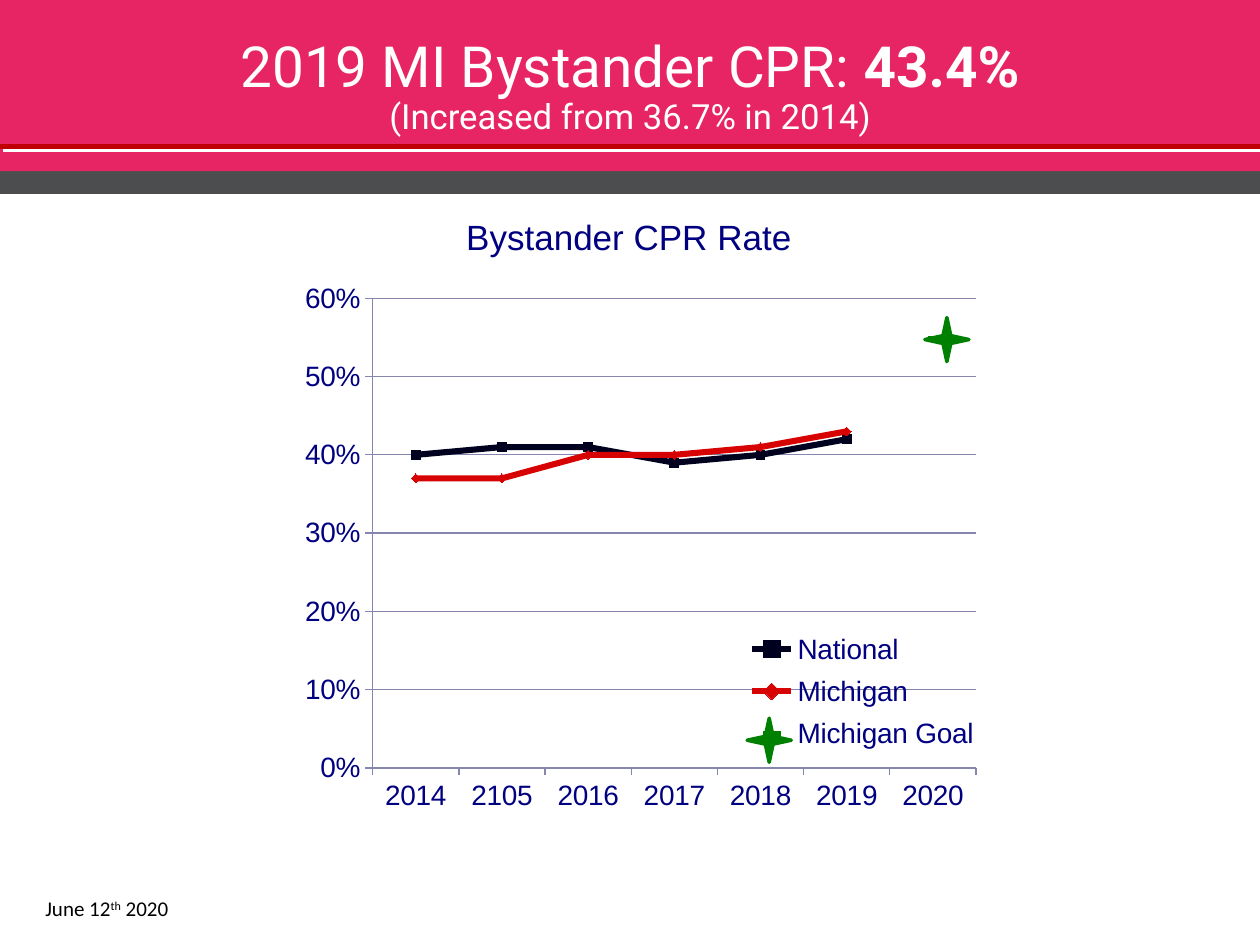
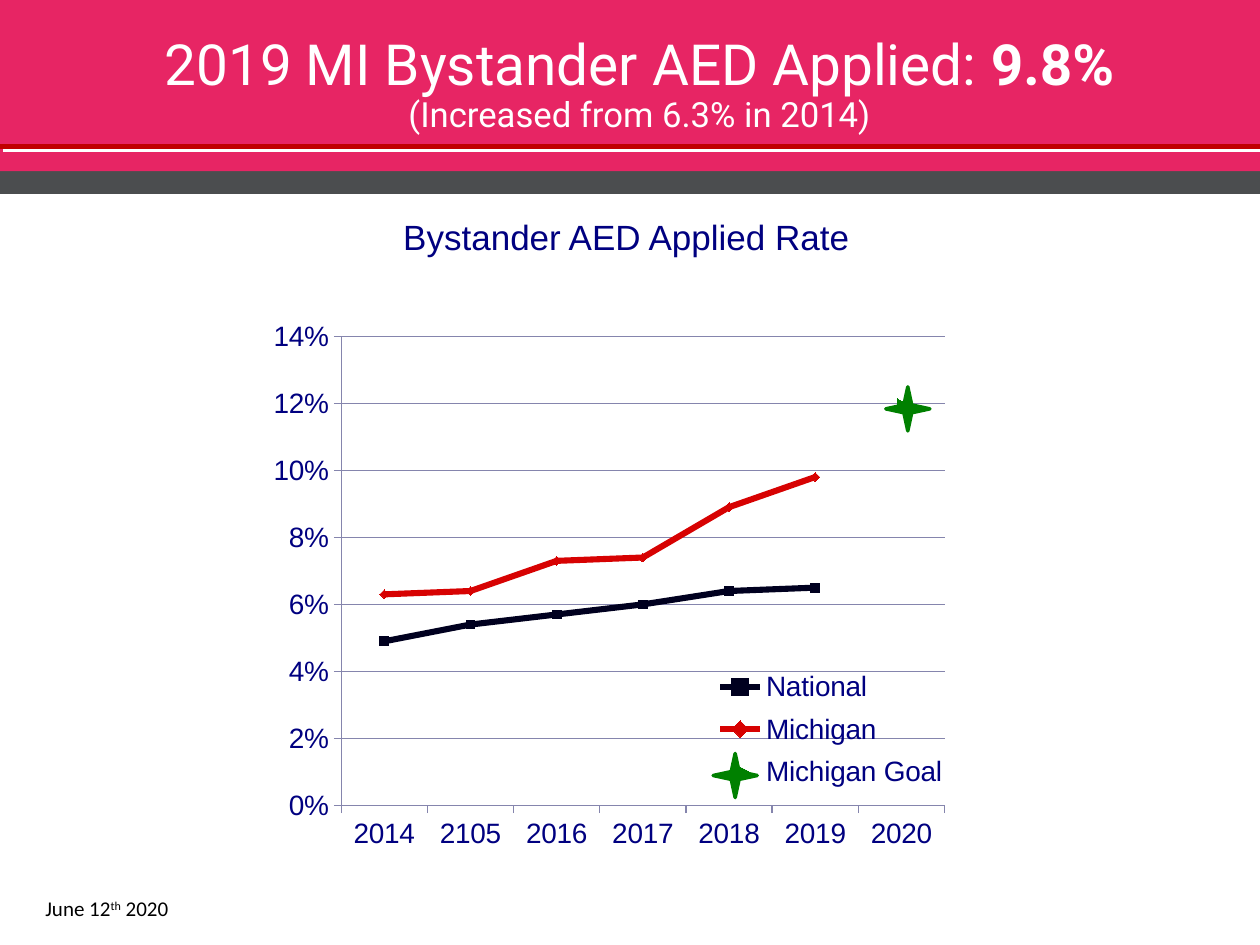
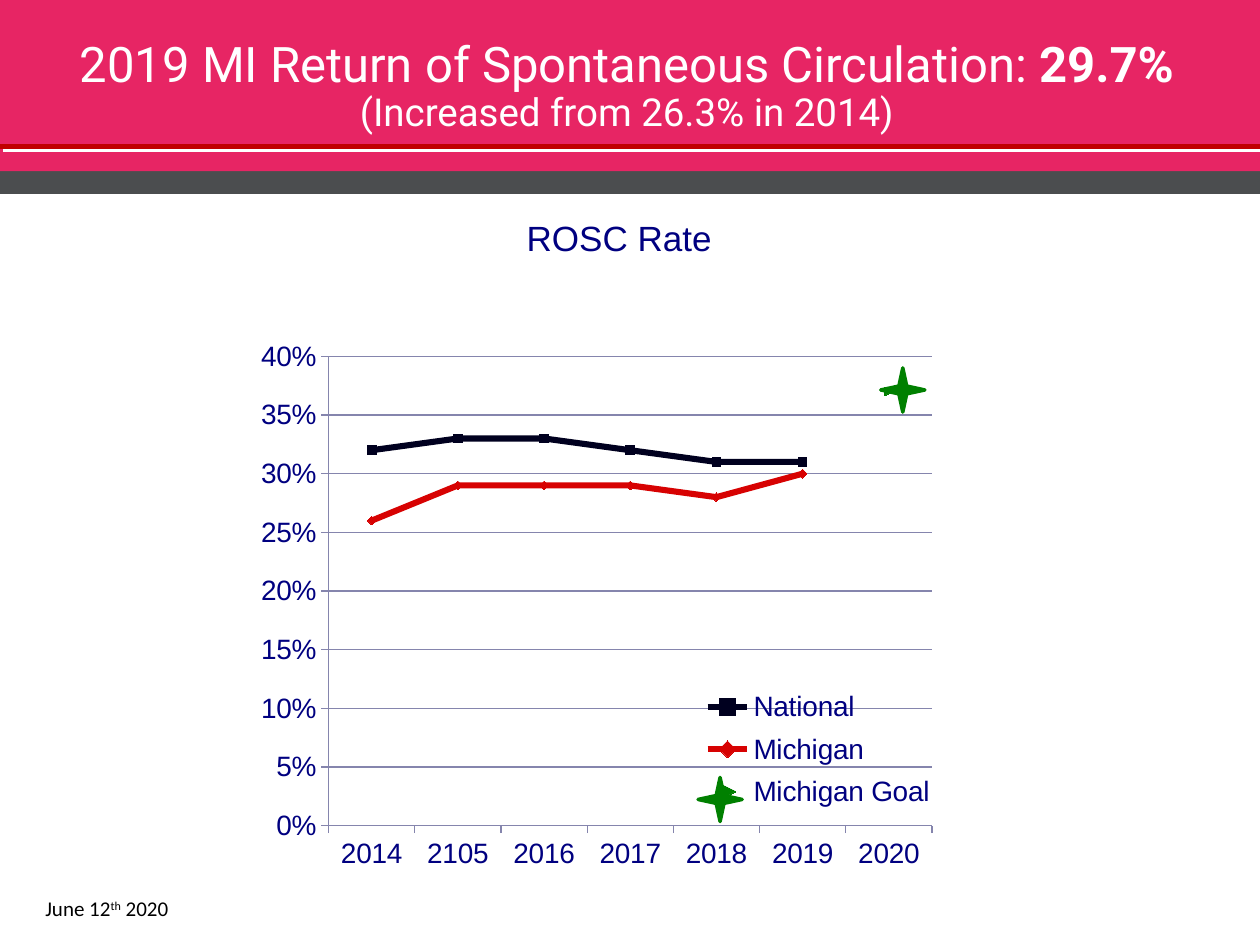
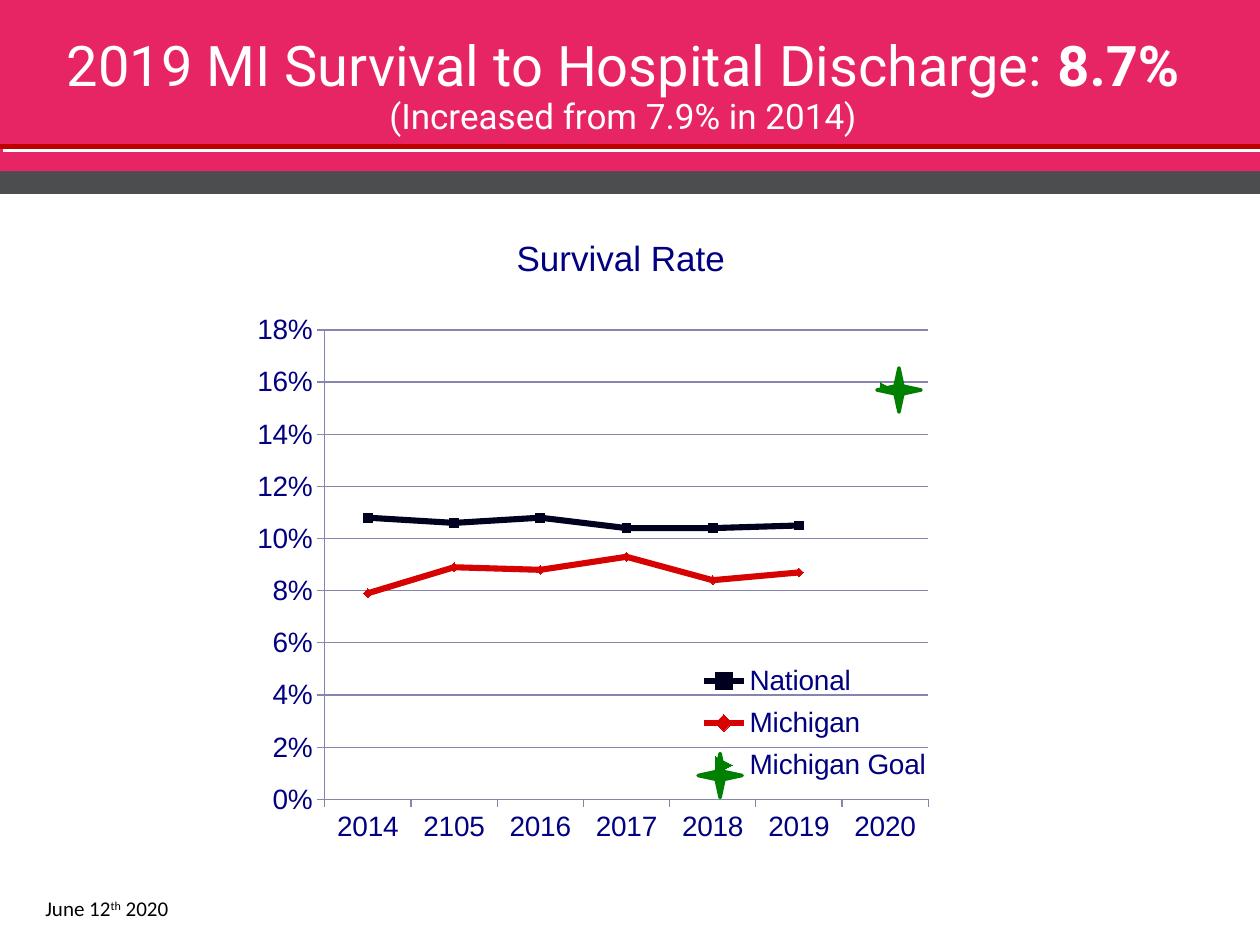
from pptx import Presentation
from pptx import util as u
from pptx.chart.data import CategoryChartData
from pptx.dml.color import RGBColor
from pptx.enum import chart as charts, shapes, text
from pptx.oxml import parse_xml
from pptx.oxml.ns import nsdecls, qn

COLORS = {
    "pink": "E72564", "gray": "4B4D4F", "white": "FFFFFF", "black": "000000",
    "rule": "C00000", "navy": "000080", "grid": "8585AD",
    "national": "00001F", "michigan": "D70202", "goal": "008000",
}
YEARS = ["2014", "2105", "2016", "2017", "2018", "2019", "2020"]
CHART_WIDTH, CHART_HEIGHT = 5.48, 4.4
STAR_SIZE = 0.35
PLOT_LAYOUT = (0.1, 0.061, 0.874, 0.847)
LEGEND_LAYOUT = (0.64, 0.645, 0.34, 0.25)

# Boxes are left, top, width, height in inches; stars are left, top.
RATES = [
    dict(title="2019 MI Bystander CPR: ", rate="43.4%", change="(Increased from 36.7% in 2014)",
         title_box=(0.69, 0.22, 8.62, 0.95), sizes=(32.4, 19.8),
         heading="Bystander CPR Rate", heading_box=(3.65, 1.66, 2.7, 0.44),
         chart_at=(2.41, 2.1), stars=[(7.34, 2.52), (5.93, 5.7)], scale=(0.6, 0.1),
         national=[0.4, 0.41, 0.41, 0.39, 0.4, 0.42],
         michigan=[0.37, 0.37, 0.4, 0.4, 0.41, 0.43], goal=0.55,
         goal_marker=charts.XL_MARKER_STYLE.DASH),
    dict(title="2019 MI Bystander AED Applied: ", rate="9.8%", change="(Increased from 6.3% in 2014)",
         title_box=(0.69, 0, 8.77, 1.36), sizes=(32.4, 19.8),
         heading="Bystander AED Applied Rate", heading_box=(3.15, 1.66, 3.7, 0.44),
         chart_at=(2.16, 2.4), stars=[(7.03, 3.07), (5.66, 5.98)], scale=(0.14, 0.02),
         national=[0.049, 0.054, 0.057, 0.06, 0.064, 0.065],
         michigan=[0.063, 0.064, 0.073, 0.074, 0.089, 0.098], goal=0.12),
    dict(title="2019 MI Return of Spontaneous Circulation: ", rate="29.7%",
         change="(Increased from 26.3% in 2014)",
         title_box=(0.17, 0.22, 9.61, 0.95), sizes=(28, 22),
         heading="ROSC Rate", heading_box=(4.13, 1.67, 1.58, 0.44),
         chart_at=(2.06, 2.56), stars=[(6.99, 2.92), (5.54, 6.17)], scale=(0.4, 0.05),
         national=[0.32, 0.33, 0.33, 0.32, 0.31, 0.31],
         michigan=[0.26, 0.29, 0.29, 0.29, 0.28, 0.3], goal=0.37),
    dict(title="2019 MI Survival to Hospital Discharge: ", rate="8.7%",
         change="(Increased from 7.9% in 2014)",
         title_box=(0.17, 0.22, 9.55, 0.95), sizes=(32, 20),
         heading="Survival Rate", heading_box=(4.05, 1.83, 1.77, 0.44),
         chart_at=(2.03, 2.35), stars=[(6.96, 2.92), (5.54, 5.98)], scale=(0.18, 0.02),
         national=[0.108, 0.106, 0.108, 0.104, 0.104, 0.105],
         michigan=[0.079, 0.089, 0.088, 0.093, 0.084, 0.087], goal=0.158),
]


def color(name):
    return RGBColor.from_string(COLORS[name])


def inches(*lengths):
    return [u.Inches(length) for length in lengths]


def add_run(paragraph, words, font="Arial", size=20, ink="navy", bold=False, baseline=None):
    run = paragraph.add_run()
    run.text = words
    run.font.name = font
    run.font.size = u.Pt(size)
    run.font.bold = bold
    run.font.color.rgb = color(ink)
    if baseline:
        run.font._element.set("baseline", str(baseline))


def manual_layout(box, inner=False):
    """Return a c:layout element placing a chart part by fractions of the chart."""
    target = '<c:layoutTarget val="inner"/>' if inner else ""
    modes = '<c:xMode val="edge"/><c:yMode val="edge"/>'
    sides = "".join(f'<c:{side} val="{value}"/>' for side, value in zip("xywh", box))
    return parse_xml(f'<c:layout {nsdecls("c")}><c:manualLayout>{target}{modes}{sides}'
                     '</c:manualLayout></c:layout>')


class Deck:
    def __init__(self):
        self.presentation = Presentation()
        self.presentation.slide_width, self.presentation.slide_height = inches(10, 7.5)
        self.slide = None

    def new_slide(self):
        self.slide = self.presentation.slides.add_slide(self.presentation.slide_layouts[6])
        self.shape(shapes.MSO_SHAPE.RECTANGLE, (0, 0, 10, 1.54), "gray")
        self.shape(shapes.MSO_SHAPE.RECTANGLE, (0, 0, 10, 1.36), "pink")

    def shape(self, kind, box, fill, line_width=0):
        shape = self.slide.shapes.add_shape(kind, *inches(*box))
        shape.shadow.inherit = False
        shape.fill.solid()
        shape.fill.fore_color.rgb = color(fill)
        if line_width:
            shape.line.color.rgb = color(fill)
            shape.line.width = u.Pt(line_width)
        else:
            shape.line.fill.background()

    def star(self, left, top):
        self.shape(shapes.MSO_SHAPE.STAR_4_POINT, (left, top, STAR_SIZE, STAR_SIZE), "goal", 2)

    def text_box(self, box, wrap=True, anchor=text.MSO_ANCHOR.MIDDLE, grow=True):
        """Add an empty text box and return its first paragraph."""
        frame = self.slide.shapes.add_textbox(*inches(*box)).text_frame
        frame.word_wrap = wrap
        frame.vertical_anchor = anchor
        frame.auto_size = (text.MSO_AUTO_SIZE.SHAPE_TO_FIT_TEXT if grow
                           else text.MSO_AUTO_SIZE.NONE)
        frame.margin_left = frame.margin_right = u.Inches(0.05)
        frame.margin_top = frame.margin_bottom = u.Inches(0.05)
        return frame.paragraphs[0]

    def title(self, box, words, rate, change, sizes):
        paragraph = self.text_box(box, grow=False)
        paragraph.alignment = text.PP_ALIGN.CENTER
        paragraph.line_spacing = 0.9
        style = dict(font="Roboto", ink="white")
        add_run(paragraph, words, size=sizes[0], **style)
        add_run(paragraph, rate, size=sizes[0], bold=True, **style)
        paragraph.add_line_break()
        add_run(paragraph, change, size=sizes[1], **style)

    def title_rule(self):
        """Draw the red line under the title with its hard white shadow."""
        line = self.slide.shapes.add_connector(
            shapes.MSO_CONNECTOR.STRAIGHT, *inches(0, 1.16, 10, 1.16))
        line.line.color.rgb = color("rule")
        line.line.width = u.Pt(3)
        line._element.spPr.append(parse_xml(
            f'<a:effectLst {nsdecls("a")}><a:outerShdw dist="35560" dir="2700000" algn="ctr" '
            f'rotWithShape="0"><a:srgbClr val="{COLORS["white"]}"/></a:outerShdw></a:effectLst>'))

    def heading(self, box, words):
        add_run(self.text_box(box, wrap=False, anchor=text.MSO_ANCHOR.TOP), words)

    def date(self):
        paragraph = self.text_box((0.31, 7.06, 2.25, 0.3))
        for words, baseline in (("June 12", None), ("th", 30000), (" 2020", None)):
            add_run(paragraph, words, "Calibri", 12, "black", baseline=baseline)

    def rate_chart(self, at, national, michigan, goal, scale, goal_marker):
        data = CategoryChartData(number_format="0%")
        data.categories = YEARS
        data.add_series("National", national + [None])
        data.add_series("Michigan", michigan + [None])
        data.add_series("Michigan Goal", [None] * 6 + [goal])
        chart = self.slide.shapes.add_chart(
            charts.XL_CHART_TYPE.LINE_MARKERS,
            *inches(*at, CHART_WIDTH, CHART_HEIGHT), data).chart
        chart.has_title = False
        chart.font.name = "Arial"
        chart.font.size = u.Pt(16)
        chart.font.color.rgb = color("navy")

        chart.has_legend = True
        chart.legend.position = charts.XL_LEGEND_POSITION.RIGHT
        chart.legend.include_in_layout = False
        legend = chart.legend._element
        for layout in legend.findall(qn("c:layout")):
            legend.remove(layout)
        legend.find(qn("c:legendPos")).addnext(manual_layout(LEGEND_LAYOUT))
        plot_area = chart._chartSpace.chart.plotArea
        for layout in plot_area.findall(qn("c:layout")):
            plot_area.remove(layout)
        plot_area.insert(0, manual_layout(PLOT_LAYOUT, inner=True))

        self.style_axes(chart, *scale)
        automatic = charts.XL_MARKER_STYLE.AUTOMATIC
        chart.plots[0].vary_by_categories = False
        markers = (automatic, automatic, goal_marker)
        for series, ink, marker in zip(chart.plots[0].series,
                                       ("national", "michigan", "goal"), markers):
            series.smooth = False
            series.marker.style = marker
            series.marker.size = 5
            series.marker.format.fill.solid()
            series.marker.format.fill.fore_color.rgb = color(ink)
            series.marker.format.line.color.rgb = color(ink)
            if ink == "goal":
                series.format.line.fill.background()
            else:
                series.format.line.color.rgb = color(ink)
                series.format.line.width = u.Pt(3.5)

    def style_axes(self, chart, maximum, step):
        values = chart.value_axis
        values.minimum_scale, values.maximum_scale, values.major_unit = 0, maximum, step
        values.has_major_gridlines = True
        values.tick_labels.number_format = "0%"
        values.tick_labels.number_format_is_linked = False
        for axis in (values, chart.category_axis):
            axis.major_tick_mark = charts.XL_TICK_MARK.OUTSIDE
            axis.minor_tick_mark = charts.XL_TICK_MARK.NONE
            axis.tick_labels.font.size = u.Pt(16)
        for part in (values, values.major_gridlines, chart.category_axis):
            part.format.line.color.rgb = color("grid")
            part.format.line.width = u.Pt(0.75)

    def rate_slide(self, title, rate, change, title_box, sizes, heading, heading_box, chart_at,
                   stars, scale, national, michigan, goal,
                   goal_marker=charts.XL_MARKER_STYLE.DOT):
        self.new_slide()
        self.rate_chart(chart_at, national, michigan, goal, scale, goal_marker)
        self.title(title_box, title, rate, change, sizes)
        self.title_rule()
        for star in stars:
            self.star(*star)
        self.heading(heading_box, heading)
        self.date()


def main():
    deck = Deck()
    for rate in RATES:
        deck.rate_slide(**rate)
    deck.presentation.save("out.pptx")


if __name__ == "__main__":
    main()
